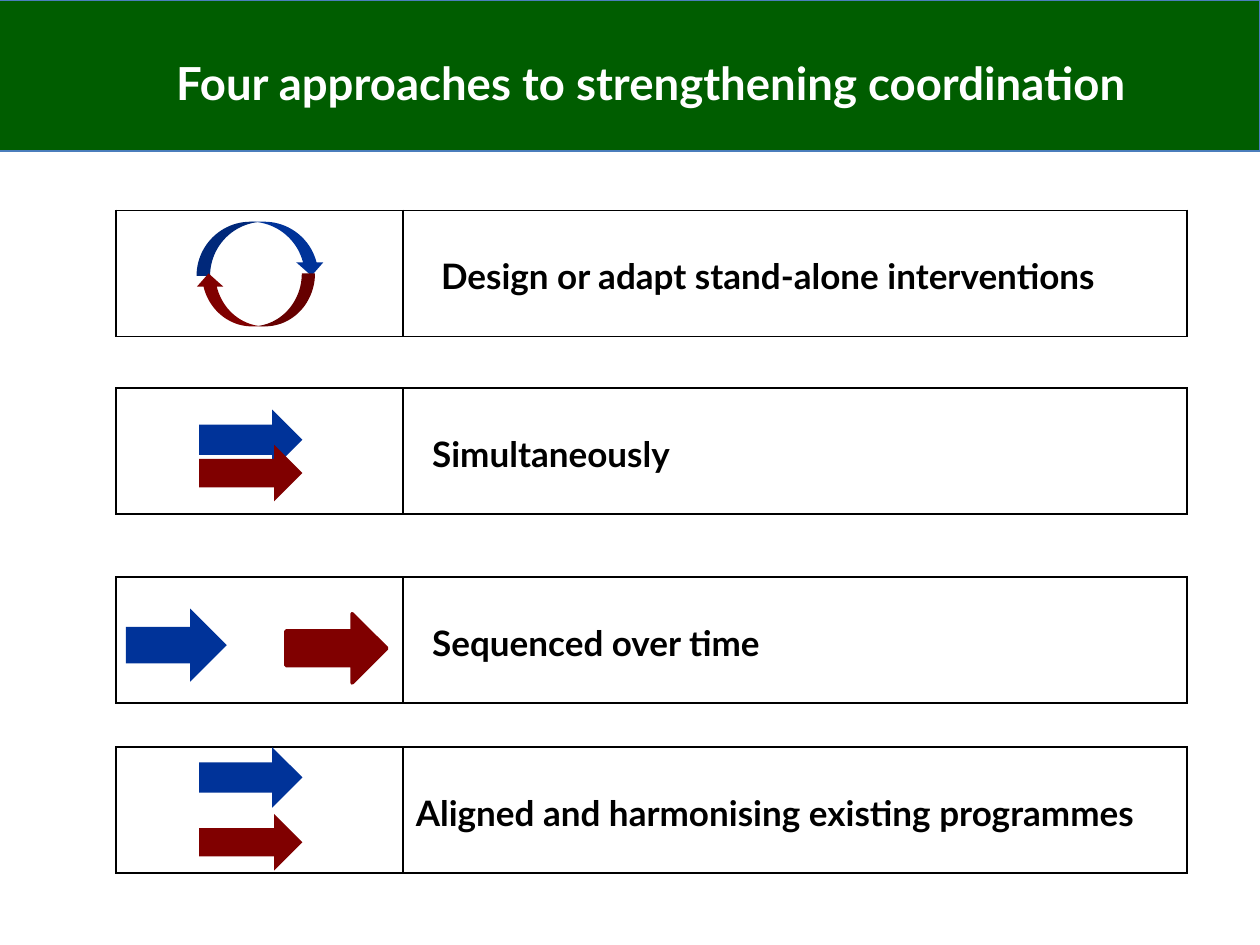
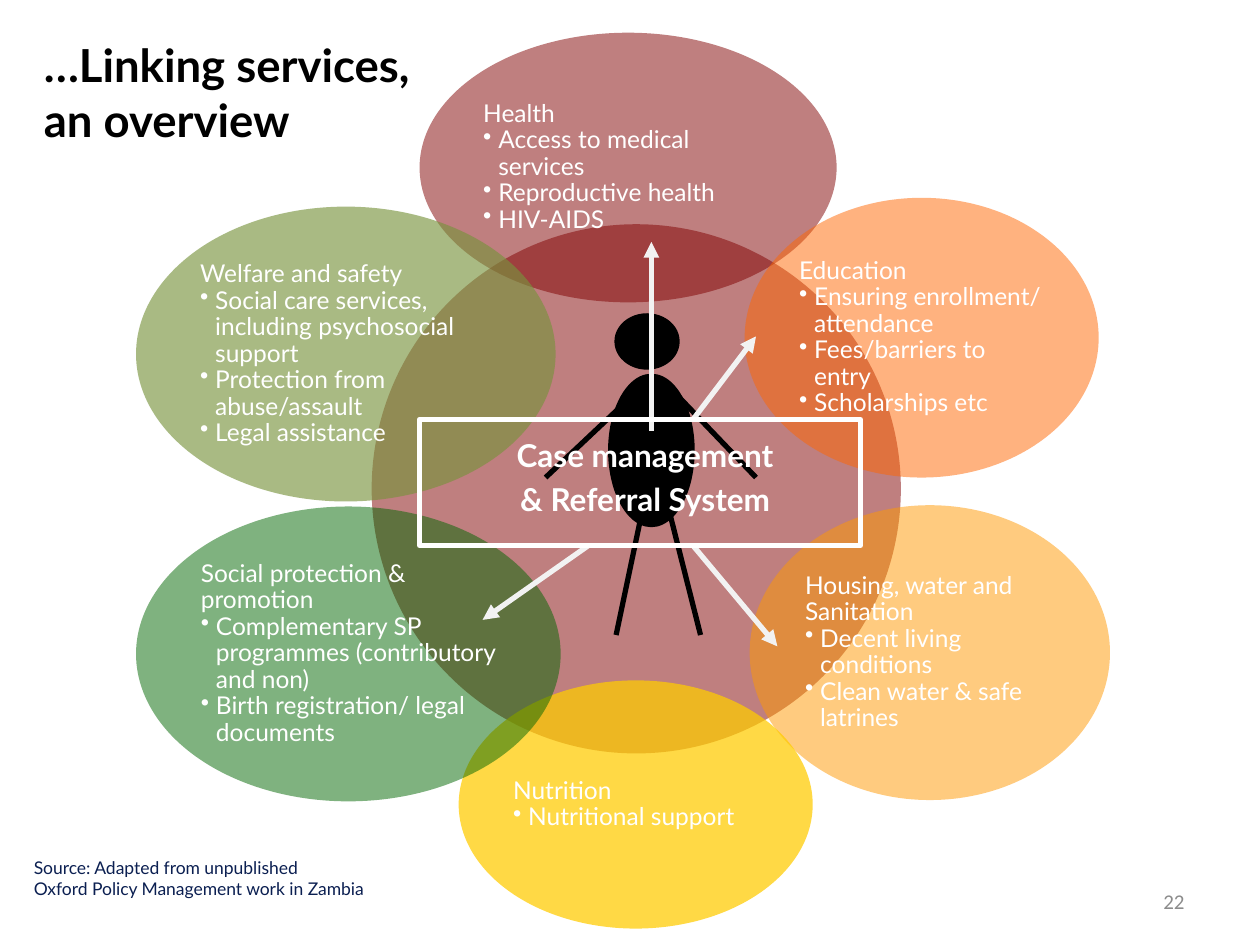
import math

from lxml import etree
from pptx import Presentation
from pptx import util as u
from pptx.dml import color
from pptx.enum import shapes, text
from pptx.oxml import ns

BLUE, RED, BLACK, WHITE, PALE = "003399", "800000", "000000", "FFFFFF", "F2F2F2"
GREEN, NAVY, GREY = "005D00", "0B1F51", "8C8C8C"
KIND = shapes.MSO_SHAPE
MIDDLE = text.MSO_ANCHOR.MIDDLE
CENTER, RIGHT = text.PP_ALIGN.CENTER, text.PP_ALIGN.RIGHT
TITLE = {"size": 26, "bold": True}

APPROACHES = [
    (1.67, 0.30, "Design or adapt stand-alone interventions", [
        (KIND.CURVED_DOWN_ARROW, 1.56, 0.09, 1.02, 0.43, BLUE, {}),
        (KIND.CURVED_DOWN_ARROW, 1.55, 0.50, 0.95, 0.42, RED, {"rotation": 180})]),
    (3.08, 0.23, "Simultaneously", [
        (KIND.RIGHT_ARROW, 1.58, 0.17, 0.82, 0.48, BLUE, {}),
        (KIND.RIGHT_ARROW, 1.58, 0.45, 0.82, 0.45, RED, {})]),
    (4.58, 0.23, "Sequenced over time", [
        (KIND.RIGHT_ARROW, 2.27, 0.29, 0.80, 0.55, RED, {"line": RED, "width": 2}),
        (KIND.RIGHT_ARROW, 1.00, 0.25, 0.80, 0.58, BLUE, {})]),
    (5.93, 0.10, "Aligned and harmonising existing programmes", [
        (KIND.RIGHT_ARROW, 1.58, 0, 0.82, 0.48, BLUE, {}),
        (KIND.RIGHT_ARROW, 1.58, 0.53, 0.82, 0.45, RED, {})]),
]

SERVICES = [
    ((3.33, 0.26, 3.31, 2.14), RED, 50, "Health",
     ["Access to medical services", "Reproductive health", "HIV-AIDS"]),
    ((5.91, 1.57, 2.81, 2.22), "FF6600", 50, "Education",
     ["Ensuring enrollment/ attendance", "Fees/barriers to entry", "Scholarships etc"]),
    ((5.95, 4.01, 2.86, 2.34), "FF9900", 50, "Housing, water and Sanitation",
     ["Decent living conditions", "Clean water & safe latrines"]),
    ((3.64, 5.4, 2.81, 1.97), "FFCC00", 73, "Nutrition", ["Nutritional support"]),
    ((1.08, 4.02, 3.37, 2.34), "006600", 50, "Social protection & promotion",
     ["Complementary SP programmes (contributory and non)",
      "Birth registration/ legal documents"]),
    ((1.08, 1.64, 3.33, 2.34), "77933C", 63, "Welfare and safety",
     ["Social care services, including psychosocial support",
      "Protection from abuse/assault", "Legal assistance"]),
]

LIMBS = [(5.03, 3.13, 4.33, 3.79), (5.09, 4.09, 4.89, 5.04),
         (6, 3.79, 5.32, 3.08), (5.32, 4.09, 5.56, 5.04)]
REFERRALS = [(5.17, 3.42, 5.17, 1.92), (4.67, 4.33, 3.83, 4.92),
             (5.5, 3.33, 6, 2.67), (5.5, 4.33, 6.17, 5.13)]


def rgb(value):
    return color.RGBColor.from_string(value)


def inches(values):
    return [u.Inches(value) for value in values]


def add_child(parent, tag, **attributes):
    return etree.SubElement(parent, ns.qn(tag), attributes)


def set_attributes(target, values):
    for name, value in values.items():
        setattr(target, name, value)


def style_font(paragraph, ink, size, bold=False, name="Lato"):
    set_attributes(paragraph.font, {"name": name, "size": u.Pt(size), "bold": bold})
    paragraph.font.color.rgb = rgb(ink)


def add_preset(slide, kind, box, fill=None, line=None, width=0.75, opacity=100, rotation=0):
    shape = slide.shapes.add_shape(kind, *inches(box))
    shape.shadow.inherit = False
    shape.rotation = rotation
    if fill:
        shape.fill.solid()
        shape.fill.fore_color.rgb = rgb(fill)
        if opacity < 100:
            swatch = shape._element.spPr.find(".//" + ns.qn("a:srgbClr"))
            add_child(swatch, "a:alpha", val=str(opacity * 1000))
    else:
        shape.fill.background()
    if line:
        shape.line.color.rgb = rgb(line)
        shape.line.width = u.Pt(width)
    else:
        shape.line.fill.background()
    return shape


def add_text(slide, box, lines, ink, size, bold=False, name="Lato", anchor=None,
             wrap=True, inset=None, bulleted=False, **layout):
    frame = slide.shapes.add_textbox(*inches(box)).text_frame
    frame.word_wrap = wrap
    if anchor is not None:
        frame.vertical_anchor = anchor
    if inset is not None:
        sides = ("left", "top", "right", "bottom")
        set_attributes(frame, {f"margin_{side}": u.Inches(inset) for side in sides})
    for index, line in enumerate(lines):
        paragraph = frame.add_paragraph() if index else frame.paragraphs[0]
        paragraph.text = line
        if bulleted and index:
            add_bullet(paragraph)
        set_attributes(paragraph, layout)
        style_font(paragraph, ink, size, bold, name)


def add_bullet(paragraph):
    paragraph.level = 1
    properties = paragraph._p.get_or_add_pPr()
    indent = u.Inches(0.12)
    properties.set("marL", str(indent))
    properties.set("indent", str(-indent))
    add_child(properties, "a:buChar", char="•")


def add_line(slide, ends, ink, arrow=False):
    connector = slide.shapes.add_connector(shapes.MSO_CONNECTOR.STRAIGHT, *inches(ends))
    connector.line.color.rgb = rgb(ink)
    connector.line.width = u.Pt(3)
    if arrow:
        add_child(connector.line._get_or_add_ln(), "a:tailEnd", type="triangle")
    add_child(connector._element.spPr, "a:effectLst")


def outline_cell(cell):
    properties = cell._tc.get_or_add_tcPr()
    for side in ("a:lnL", "a:lnR", "a:lnT", "a:lnB"):
        border = add_child(properties, side, w=str(u.Pt(1)))
        add_child(add_child(border, "a:solidFill"), "a:srgbClr", val=BLACK)
    cell.fill.background()


def add_approach(slide, top, indent, label, arrows):
    table = slide.shapes.add_table(1, 2, *inches((0.92, top, 8.5, 1))).table
    set_attributes(table, {"first_row": False, "horz_banding": False})
    for column, width in zip(table.columns, (2.28, 6.22)):
        column.width = u.Inches(width)
    for cell in table.rows[0].cells:
        outline_cell(cell)
    label_cell = table.cell(0, 1)
    label_cell.text = label
    set_attributes(label_cell, {"vertical_anchor": MIDDLE, "margin_left": u.Inches(indent),
                                "margin_top": u.Inches(0.09)})
    style_font(label_cell.text_frame.paragraphs[0], BLACK, 20, bold=True)
    for kind, left, offset, width, height, fill, extra in arrows:
        add_preset(slide, kind, (left, top + offset, width, height), fill, **extra)


def add_service(slide, box, fill, opacity, heading, items):
    add_preset(slide, KIND.OVAL, box, fill, opacity=opacity)
    left, top, width, height = box
    scale = math.sqrt(0.5)
    margin = (1 - scale) / 2
    inner = (left + width * margin, top + height * margin, width * scale, height * scale)
    add_text(slide, inner, [heading, *items], WHITE, 14, anchor=MIDDLE, inset=0.02,
             bulleted=True, line_spacing=0.9)


def build_approaches(slide):
    add_preset(slide, KIND.RECTANGLE, (-0.02, 0, 10.02, 1.2), GREEN, "4B7EBC")
    for approach in APPROACHES:
        add_approach(slide, *approach)
    add_text(slide, (0.67, 0.03, 9, 1.25), ["Four approaches to strengthening coordination"],
             WHITE, anchor=MIDDLE, alignment=CENTER, **TITLE)


def build_services(slide):
    add_text(slide, (7.17, 6.95, 2.33, 0.4), ["22"], GREY, 12, name="Calibri",
             anchor=MIDDLE, alignment=RIGHT)
    add_preset(slide, KIND.OVAL, (2.95, 1.78, 4.2, 4.2), RED, opacity=50)
    for service in SERVICES:
        add_service(slide, *service)
    for body_part in ((4.89, 2.5, 0.49, 0.42), (4.84, 2.98, 0.66, 1.19)):
        add_preset(slide, KIND.OVAL, body_part, BLACK, BLACK, 2)
    for limb in LIMBS:
        add_line(slide, limb, BLACK)
    for referral in REFERRALS:
        add_line(slide, referral, PALE, arrow=True)
    add_text(slide, (0.17, 6.75, 3, 0.61),
             ["Source: Adapted from unpublished", "Oxford Policy Management work in Zambia"],
             NAVY, 10)
    add_preset(slide, KIND.RECTANGLE, (3.33, 3.33, 3.5, 1), line=WHITE, width=3)
    add_text(slide, (3.92, 3.52, 2.4, 0.67), ["Case management", "& Referral System"],
             WHITE, 18, bold=True, wrap=False, alignment=CENTER,
             line_spacing=0.6, space_after=u.Pt(12))
    add_text(slide, (0.25, 0.42, 3.84, 0.62), ["…Linking services,\van overview"],
             BLACK, anchor=MIDDLE, **TITLE)


def main():
    presentation = Presentation()
    presentation.slide_width, presentation.slide_height = inches((10, 7.5))
    blank = presentation.slide_layouts[6]
    for build in (build_approaches, build_services):
        build(presentation.slides.add_slide(blank))
    presentation.save("out.pptx")


if __name__ == "__main__":
    main()
